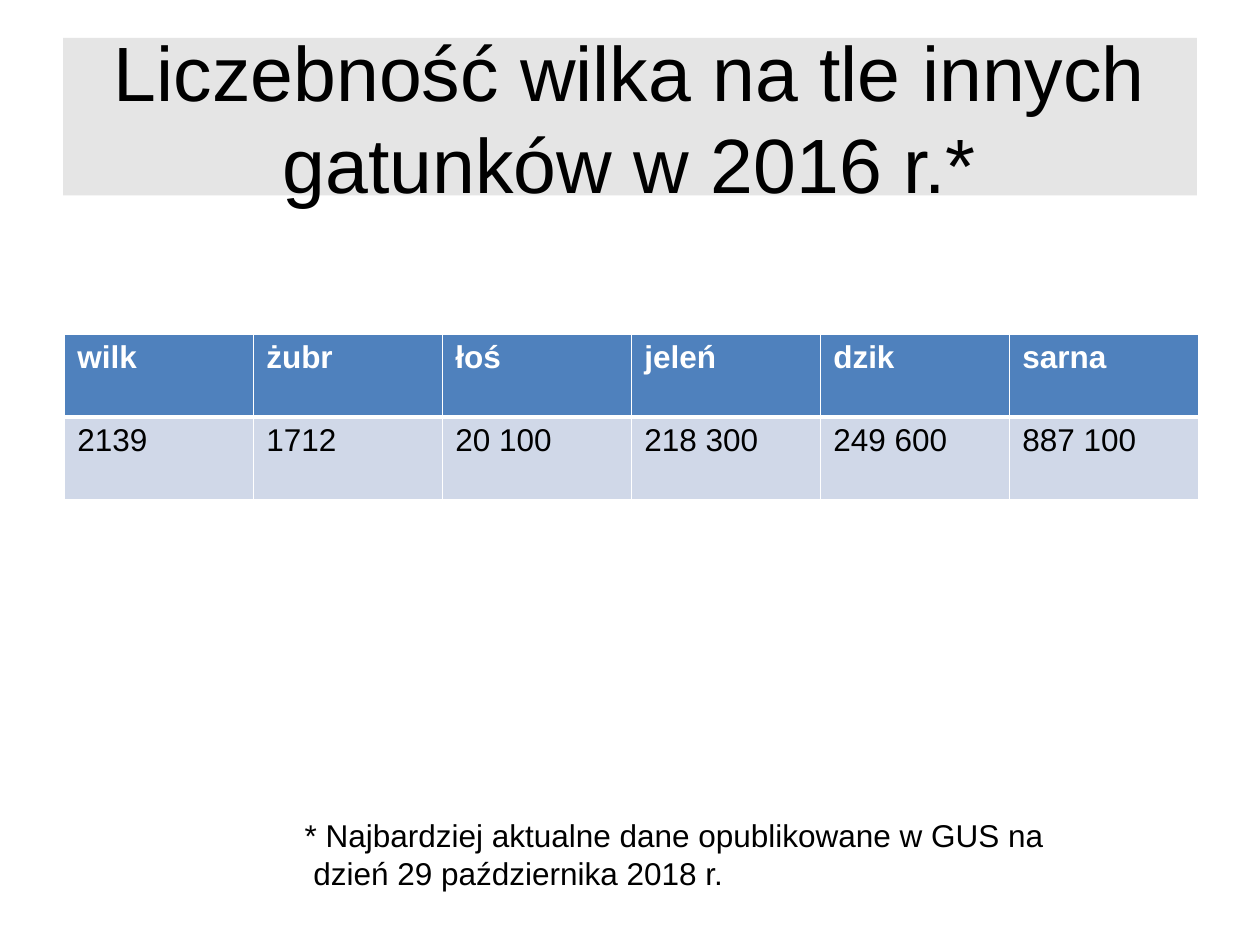
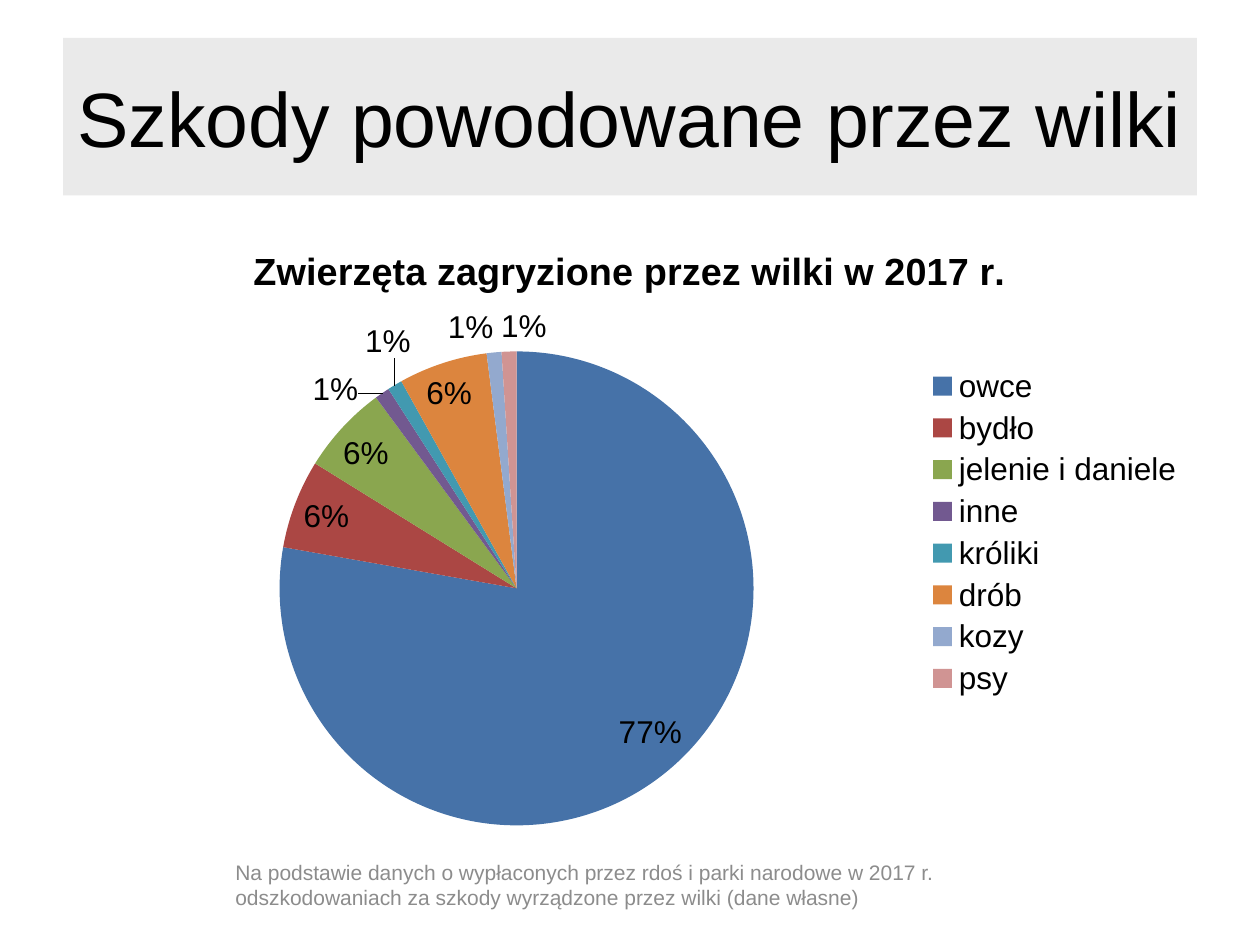
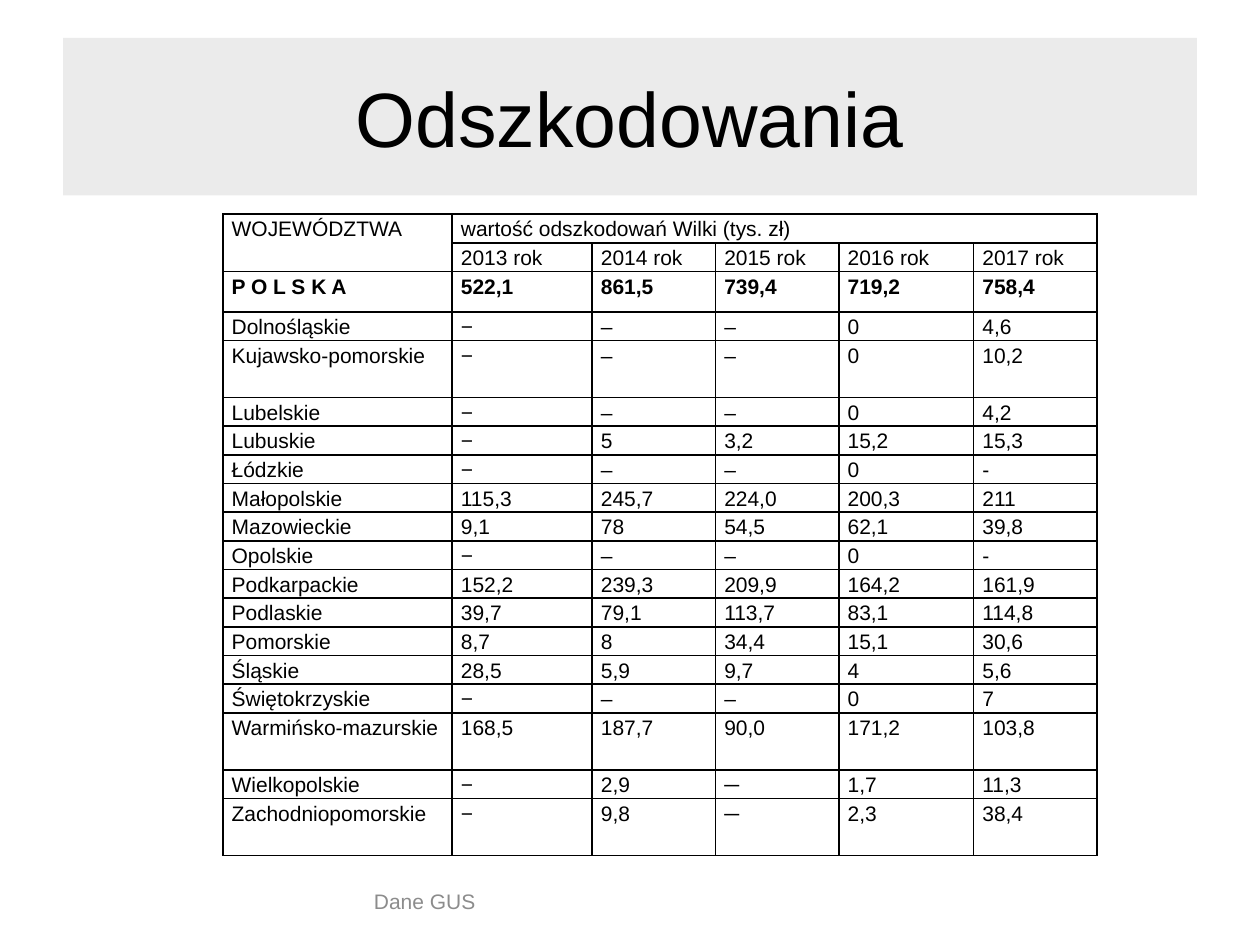
from lxml import etree
from pptx import Presentation
from pptx.chart.data import CategoryChartData
from pptx.dml.color import RGBColor
from pptx.enum import chart as ch, text as t
from pptx.oxml import ns
from pptx.util import Pt

FONT = "Arial"
BLACK, WHITE, GREY = "000000", "FFFFFF", "8C8C8C"
HEADER_BLUE, ROW_BLUE = "4F81BD", "D0D8E8"
TITLE_BOX = (36, 21.6, 648, 90)

SPECIES = [
    ["wilk", "żubr", "łoś", "jeleń", "dzik", "sarna"],
    ["2139", "1712", "20 100", "218 300", "249 600", "887 100"],
]

# Animal: share in percent, slice colour
KILLED = {
    "owce": (77, "4672A8"),
    "bydło": (6, "AB4744"),
    "jelenie i daniele": (6, "8AA64F"),
    "inne": (1, "725990"),
    "króliki": (1, "4299B0"),
    "drób": (6, "DC853E"),
    "kozy": (1, "93A9CE"),
    "psy": (1, "D09493"),
}

COMPENSATION = [row.split("|") for row in """\
WOJEWÓDZTWA|wartość odszkodowań Wilki (tys. zł)||||
|2013 rok|2014 rok|2015 rok|2016 rok|2017 rok
P O L S K A|522,1|861,5|739,4|719,2|758,4
Dolnośląskie|−|–|–|0|4,6
Kujawsko-pomorskie|−|–|–|0|10,2
Lubelskie|−|–|–|0|4,2
Lubuskie|−|5|3,2|15,2|15,3
Łódzkie|−|–|–|0|-
Małopolskie|115,3|245,7|224,0|200,3|211
Mazowieckie|9,1|78|54,5|62,1|39,8
Opolskie|−|–|–|0|-
Podkarpackie|152,2|239,3|209,9|164,2|161,9
Podlaskie|39,7|79,1|113,7|83,1|114,8
Pomorskie|8,7|8|34,4|15,1|30,6
Śląskie|28,5|5,9|9,7|4|5,6
Świętokrzyskie|−|–|–|0|7
Warmińsko-mazurskie|168,5|187,7|90,0|171,2|103,8
Wielkopolskie|−|2,9|─|1,7|11,3
Zachodniopomorskie|−|9,8|─|2,3|38,4""".splitlines()]


def rgb(value):
    return RGBColor.from_string(value)


def pts(box):
    return [Pt(v) for v in box]


def style_font(font, size=18, color=BLACK, bold=False):
    font.name, font.size, font.bold = FONT, Pt(size), bold
    font.color.rgb = rgb(color)


def write(tf, words, align=None, spacing=None, hanging=0, **font):
    p = tf.paragraphs[0]
    p.alignment = align
    if spacing:
        p.line_spacing = spacing
    if hanging:
        pPr = p._p.get_or_add_pPr()
        pPr.set("marL", str(Pt(hanging)))
        pPr.set("indent", str(-Pt(hanging)))
    r = p.add_run()
    r.text = words
    style_font(r.font, **font)


def add_title_slide(prs, words, band, opacity):
    """Slide with a translucent band behind its title."""
    s = prs.slides.add_slide(prs.slide_layouts[5])
    sp = s.shapes.title
    sp.left, sp.top, sp.width, sp.height = pts(TITLE_BOX)
    sp.fill.solid()
    sp.fill.fore_color.rgb = rgb(band)
    color = sp.fill._xPr.find(".//" + ns.qn("a:srgbClr"))
    etree.SubElement(color, ns.qn("a:alpha"), val=str(opacity * 1000))
    tf = sp.text_frame
    tf.auto_size, tf.vertical_anchor = t.MSO_AUTO_SIZE.NONE, t.MSO_ANCHOR.MIDDLE
    write(tf, words, align=t.PP_ALIGN.CENTER, size=44)
    return s


def add_note(s, box, words, anchor=t.MSO_ANCHOR.MIDDLE, **fmt):
    tf = s.shapes.add_textbox(*pts(box)).text_frame
    tf.word_wrap, tf.vertical_anchor = True, anchor
    write(tf, words, **fmt)


def set_borders(cell, color, left=1, right=1, top=1, bottom=1):
    tcPr = cell._tc.get_or_add_tcPr()
    for side, width in zip("LRTB", (left, right, top, bottom)):
        ln = etree.SubElement(tcPr, ns.qn(f"a:ln{side}"), w=str(Pt(width)))
        fill = etree.SubElement(ln, ns.qn("a:solidFill"))
        etree.SubElement(fill, ns.qn("a:srgbClr"), val=color)


def add_grid(s, origin, widths, heights):
    """Unstyled table with the given column widths and row heights."""
    box = (*origin, sum(widths), sum(heights))
    table = s.shapes.add_table(len(heights), len(widths), *pts(box)).table
    table.first_row = table.horz_banding = False
    for col, width in zip(table.columns, widths):
        col.width = Pt(width)
    for row, height in zip(table.rows, heights):
        row.height = Pt(height)
    return table


def add_species_table(s, box):
    x, y, w, h = box
    cols, rows = len(SPECIES[0]), len(SPECIES)
    table = add_grid(s, (x, y), [w / cols] * cols, [h / rows] * rows)
    for i, values in enumerate(SPECIES):
        head = i == 0
        for j, value in enumerate(values):
            cell = table.cell(i, j)
            set_borders(cell, WHITE, top=1 if head else 3, bottom=3 if head else 1)
            cell.fill.solid()
            cell.fill.fore_color.rgb = rgb(HEADER_BLUE if head else ROW_BLUE)
            write(cell.text_frame, value, bold=head, color=WHITE if head else BLACK)


def add_compensation_table(s, origin):
    total, tall = 2, (4, 16, 18)
    heights = [23 if i == total else 32.6 if i in tall else 16.4
               for i in range(len(COMPENSATION))]
    table = add_grid(s, origin, [131, 80, 70.5, 70.5, 77, 70.5], heights)
    table.cell(0, 0).merge(table.cell(1, 0))
    table.cell(0, 1).merge(table.cell(0, 5))
    for i, values in enumerate(COMPENSATION):
        for j, value in enumerate(values):
            cell = table.cell(i, j)
            set_borders(cell, BLACK)
            cell.fill.background()
            cell.margin_left = cell.margin_right = Pt(5)
            cell.margin_top = cell.margin_bottom = 0
            if value:
                write(cell.text_frame, value, spacing=1.15, size=12, bold=i == total)


def set_plot_layout(chart, x, y, w, h):
    """Fix the plot area, in fractions of the chart."""
    area = chart._chartSpace.chart.plotArea
    for old in area.findall(ns.qn("c:layout")):
        area.remove(old)
    layout = etree.Element(ns.qn("c:layout"))
    area.insert(0, layout)
    manual = etree.SubElement(layout, ns.qn("c:manualLayout"))
    for tag, val in (("layoutTarget", "inner"), ("xMode", "edge"), ("yMode", "edge"),
                     ("x", x), ("y", y), ("w", w), ("h", h)):
        etree.SubElement(manual, ns.qn(f"c:{tag}"), val=str(val))


def add_killed_chart(s, box):
    data = CategoryChartData()
    data.categories = list(KILLED)
    data.add_series("Series 1", [share for share, _ in KILLED.values()])
    chart = s.shapes.add_chart(ch.XL_CHART_TYPE.PIE, *pts(box), data).chart
    style_font(chart.font)
    chart.has_title = True
    write(chart.chart_title.text_frame, "Zwierzęta zagryzione przez wilki w 2017 r.",
          size=21.6, bold=True)
    chart.has_legend = True
    chart.legend.position = ch.XL_LEGEND_POSITION.RIGHT
    chart.legend.include_in_layout = False
    style_font(chart.legend.font)
    # Slices and their labels
    plot = chart.plots[0]
    plot.vary_by_categories = True
    for i, (_, color) in enumerate(KILLED.values()):
        fill = plot.series[0].points[i].format.fill
        fill.solid()
        fill.fore_color.rgb = rgb(color)
    plot.has_data_labels = True
    labels = plot.data_labels
    labels.show_value = True
    labels.number_format, labels.number_format_is_linked = '0"%"', False
    labels.position = ch.XL_LABEL_POSITION.BEST_FIT
    style_font(labels.font)
    set_plot_layout(chart, 0.19, 0.21, 0.42, 0.76)


def main():
    prs = Presentation()
    prs.slide_width, prs.slide_height = Pt(720), Pt(540)

    # Wolf numbers
    s = add_title_slide(prs, "Liczebność wilka na tle innych gatunków w 2016 r.*",
                        "D9D9D9", 66)
    add_species_table(s, (37, 190.8, 648, 95))
    add_note(s, (167, 463, 459.4, 51),
             "* Najbardziej aktualne dane opublikowane w GUS na dzień 29 października 2018 r.",
             anchor=t.MSO_ANCHOR.TOP, hanging=5)

    # Damage
    s = add_title_slide(prs, "Szkody powodowane przez wilki", "E0E0E0", 66)
    add_killed_chart(s, (36, 126, 648, 356.4))
    add_note(s, (127.4, 491, 459.4, 29),
             "Na podstawie danych o wypłaconych przez rdoś i parki narodowe w 2017 r. "
             "odszkodowaniach za szkody wyrządzone przez wilki (dane własne)",
             size=12, color=GREY)

    # Compensation
    s = add_title_slide(prs, "Odszkodowania", "E0E0E0", 63)
    add_compensation_table(s, (127.4, 122.4))
    add_note(s, (206.6, 500.4, 386, 29), "Dane GUS", size=12, color=GREY)

    prs.save("out.pptx")


if __name__ == "__main__":
    main()
